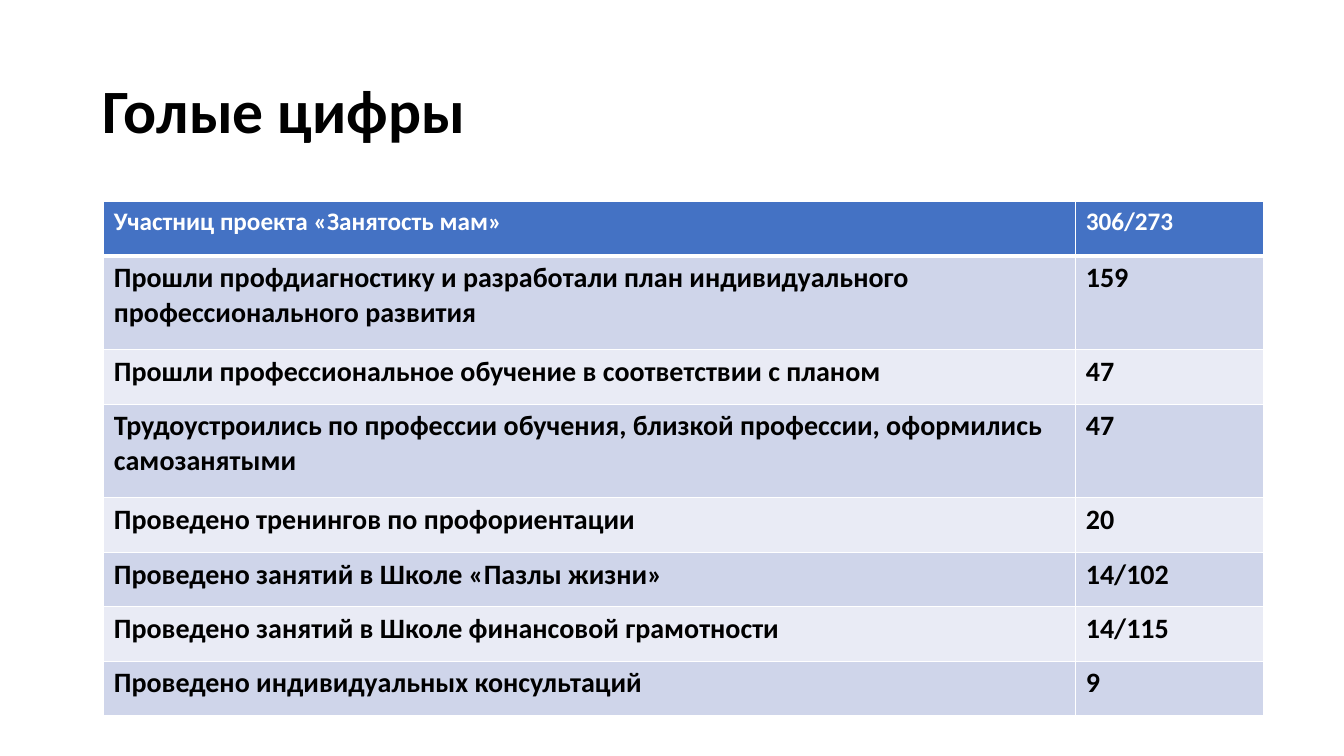
from lxml.etree import SubElement
from pptx import Presentation
from pptx.dml.color import RGBColor
from pptx.enum.text import MSO_ANCHOR as Anchor
from pptx.oxml.ns import qn
from pptx.util import Pt

EMU_PER_PX = 9144
BLACK = RGBColor(0x00, 0x00, 0x00)
WHITE = RGBColor(0xFF, 0xFF, 0xFF)
HEADER_BLUE = RGBColor(0x44, 0x72, 0xC4)
BAND_DARK = RGBColor(0xCF, 0xD5, 0xEA)
BAND_LIGHT = RGBColor(0xE9, 0xEB, 0xF5)

SINGLE_LINE, DOUBLE_LINE = 54, 93
RESULTS = [
    ("Участниц проекта «Занятость мам»", "306/273", SINGLE_LINE),
    ("Прошли профдиагностику и разработали план индивидуального "
     "профессионального развития", "159", DOUBLE_LINE),
    ("Прошли профессиональное обучение в соответствии с планом", "47", SINGLE_LINE),
    ("Трудоустроились по профессии обучения, близкой профессии, "
     "оформились самозанятыми", "47", DOUBLE_LINE),
    ("Проведено тренингов по профориентации", "20", SINGLE_LINE),
    ("Проведено занятий в Школе «Пазлы жизни»", "14/102", SINGLE_LINE),
    ("Проведено занятий в Школе финансовой грамотности", "14/115", SINGLE_LINE),
    ("Проведено индивидуальных консультаций", "9", SINGLE_LINE),
]


def px(length):
    return length * EMU_PER_PX


class SlideBuilder:
    font_name = "Calibri"

    def __init__(self, slide):
        self.slide = slide

    def text_run(self, paragraph, text, size, color):
        run = paragraph.add_run()
        run.text = text
        run.font.name = self.font_name
        run.font.size = Pt(size)
        run.font.bold = True
        run.font.color.rgb = color

    def title(self, text, left, top, width, height):
        box = self.slide.shapes.add_textbox(px(left), px(top), px(width), px(height))
        frame = box.text_frame
        frame.word_wrap = True
        frame.vertical_anchor = Anchor.MIDDLE
        heading = frame.paragraphs[0]
        heading.line_spacing = 0.9
        self.text_run(heading, text, 44, BLACK)

    def border(self, cell, side, width):
        line = SubElement(cell._tc.get_or_add_tcPr(), qn(f"a:ln{side}"), w=str(Pt(width)))
        fill = SubElement(line, qn("a:solidFill"))
        SubElement(fill, qn("a:srgbClr"), val=str(WHITE))

    def cell(self, cell, text, row):
        is_header = row == 0
        for side in "LRTB":
            header_edge = (row, side) in ((0, "B"), (1, "T"))
            self.border(cell, side, 3 if header_edge else 1)
        cell.fill.solid()
        band = BAND_DARK if row % 2 else BAND_LIGHT
        cell.fill.fore_color.rgb = HEADER_BLUE if is_header else band
        size, color = (18, WHITE) if is_header else (20, BLACK)
        self.text_run(cell.text_frame.paragraphs[0], text, size, color)

    def table(self, results, left, top, column_widths):
        heights = [height for _, _, height in results]
        table = self.slide.shapes.add_table(
            len(results), len(column_widths), px(left), px(top),
            px(sum(column_widths)), px(sum(heights))).table
        for column, width in zip(table.columns, column_widths):
            column.width = px(width)
        for row, (indicator, count, height) in enumerate(results):
            table.rows[row].height = px(height)
            for column, text in enumerate((indicator, count)):
                self.cell(table.cell(row, column), text, row)


def main():
    deck = Presentation()
    deck.slide_width, deck.slide_height = px(1333), px(750)
    builder = SlideBuilder(deck.slides.add_slide(deck.slide_layouts[6]))
    builder.title("Голые цифры", 92, 40, 1150, 145)
    builder.table(RESULTS, 103, 200, (964, 186))
    deck.save("out.pptx")


if __name__ == "__main__":
    main()
